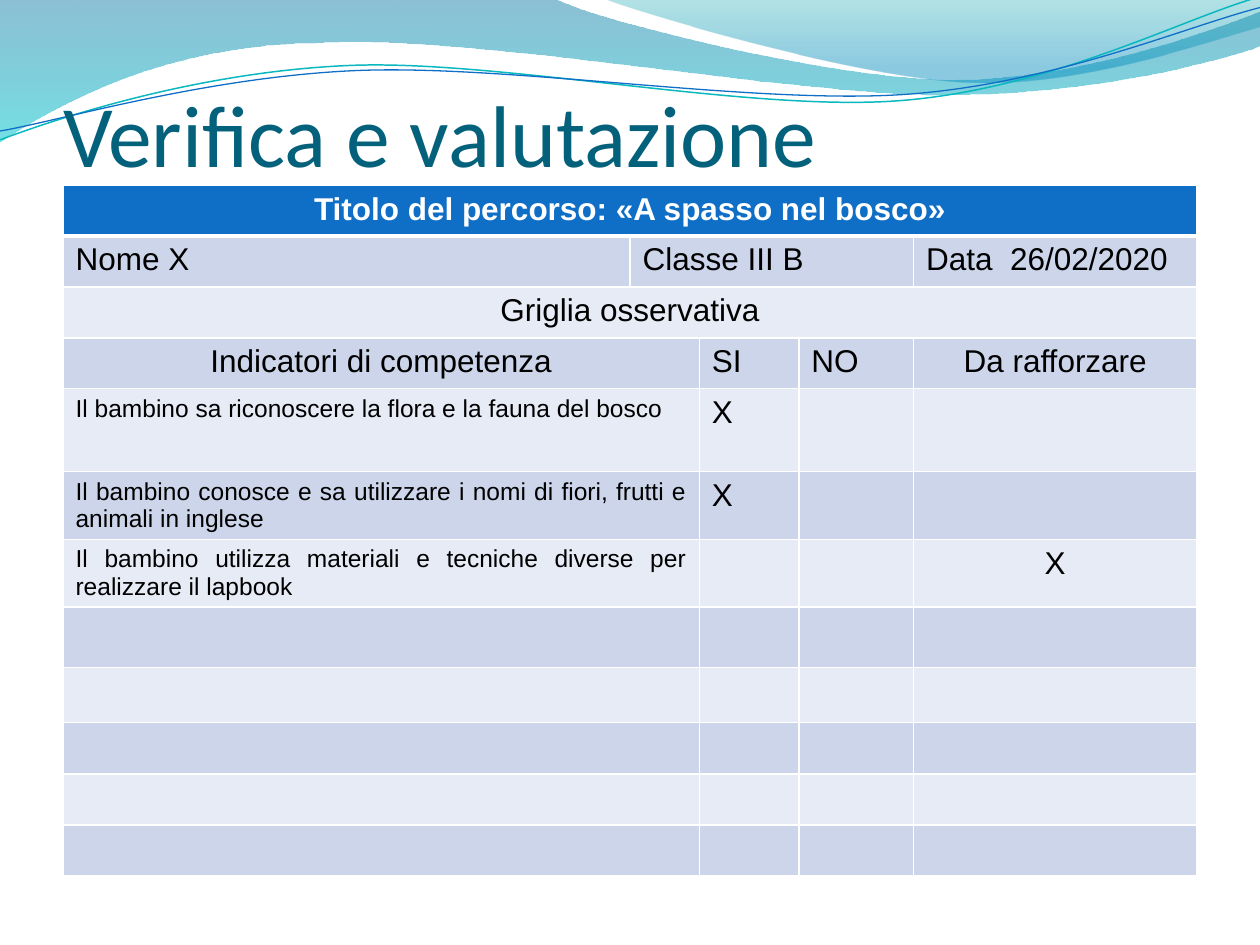
from math import cos, radians, sin

from lxml.etree import SubElement
from pptx import Presentation
from pptx.dml.color import RGBColor
from pptx.enum.text import MSO_ANCHOR, MSO_AUTO_SIZE, PP_ALIGN as ALIGN
from pptx.oxml.ns import qn
from pptx.util import Inches, Pt

COLORS = {
    "title": "04617B", "header": "0F6FC6", "band_dark": "CCD5EA", "band_light": "E7EBF5",
    "white": "FFFFFF", "black": "000000", "teal_line": "0AB8BF", "blue_line": "0F6FC6",
    "wave_blue": "0074A1", "wave_cyan": "00C6CF", "crest_teal": "00A1A9", "crest_blue": "008BBF",
}
TILT = -2.7  # degrees, for the two thin curves

# Outlines: one point is a straight step, three points are a Bezier curve
WAVE = [[(0, -0.01)], [(4.4, -0.01)], [(4.76, 0.17), (6.64, 0.63), (7.58, 0.63)],
        [(8.53, 0.63), (9.58, 0.26), (10, 0.09)], [(10.01, 0.36)],
        [(9.83, 0.44), (8.7, 0.76), (7.46, 0.75)], [(6.22, 0.75), (3.82, 0.28), (2.57, 0.34)],
        [(1.29, 0.35), (0.46, 0.83), (-0.01, 1.13)], [(0, -0.01)]]
CREST = [[(4.79, -0.01)], [(5.09, 0.11), (6.82, 0.62), (7.69, 0.65)],
         [(8.56, 0.69), (9.61, 0.32), (10, 0.21)], [(10, 0)], [(4.79, -0.01)]]
TEAL_CURVE = [[(0, 1.11)], [(0.48, 0.93), (1.58, 0.57), (2.77, 0.52)],
              [(3.95, 0.47), (5.93, 0.89), (7.13, 0.8)],
              [(8.33, 0.71), (9.38, 0.15), (9.98, -0.02)]]
BLUE_CURVE = [[(0, 1.04)], [(0.47, 0.96), (1.64, 0.61), (2.83, 0.56)],
              [(4.03, 0.51), (5.97, 0.83), (7.17, 0.75)],
              [(8.36, 0.67), (9.41, 0.21), (10, 0.06)]]

# Table content: (first column, last column, text, alignment, size)
COLUMNS = [4.5, 0.55, 0.79, 0.91, 2.25]
ROWS = [0.405] * 4 + [0.66, 0.54, 0.54, 0.48, 0.44] + [0.405] * 3
HEADINGS = [
    [(0, 4, "Titolo del percorso: «A spasso nel bosco»", ALIGN.CENTER, 18)],
    [(0, 0, "Nome X", ALIGN.LEFT, 18), (1, 3, "Classe III B", ALIGN.LEFT, 18),
     (4, 4, "Data  26/02/2020", ALIGN.LEFT, 18)],
    [(0, 4, "Griglia osservativa", ALIGN.CENTER, 18)],
    [(0, 1, "Indicatori di competenza", ALIGN.CENTER, 18), (2, 2, "SI", ALIGN.LEFT, 18),
     (3, 3, "NO", ALIGN.LEFT, 18), (4, 4, "Da rafforzare", ALIGN.CENTER, 18)],
]
# Indicator and the column that holds its mark
INDICATORS = [
    ("Il bambino sa riconoscere la flora e la fauna del bosco", 2),
    ("Il bambino conosce e sa utilizzare i nomi di fiori, frutti e animali in inglese", 2),
    ("Il bambino utilizza materiali e tecniche diverse per realizzare il lapbook", 4),
]


def color(name):
    return RGBColor.from_string(COLORS[name])


def turn(outline, degrees, center):
    """Rotate every point of an outline about a center."""
    c, s = cos(radians(degrees)), sin(radians(degrees))
    cx, cy = center
    return [[(cx + (x - cx) * c - (y - cy) * s, cy + (x - cx) * s + (y - cy) * c)
             for x, y in step] for step in outline]


def add_outline(shapes, left, top, outline, closed):
    steps = [[(Inches(left + x), Inches(top + y)) for x, y in step] for step in outline]
    ends = [step[-1] for step in steps]
    builder = shapes.build_freeform(*ends[0])
    builder.add_line_segments(ends[1:], close=closed)
    shape = builder.convert_to_shape()
    shape.shadow.inherit = False
    # Bend the straight segments that have control points
    segments = list(shape._element.iter(qn("a:lnTo")))
    for segment, step in zip(segments, steps[1:]):
        if len(step) == 3:
            curve = segment.getparent().makeelement(qn("a:cubicBezTo"))
            for x, y in step:
                SubElement(curve, qn("a:pt"), x=str(x - shape.left), y=str(y - shape.top))
            segment.getparent().replace(segment, curve)
    return shape


def add_wave(slide, left, top, outline, stops):
    """Filled wave; each stop is (position, color name, opacity in percent)."""
    shape = add_outline(slide.shapes, left, top, outline, True)
    shape.line.fill.background()
    shape.fill.gradient()
    shape.fill.gradient_angle = 270
    for stop, (position, name, _) in zip(shape.fill.gradient_stops, stops):
        stop.position = position
        stop.color.rgb = color(name)
    gradient = shape._element.spPr.find(qn("a:gradFill"))
    for element, (_, _, opacity) in zip(gradient.iter(qn("a:srgbClr")), stops):
        SubElement(element, qn("a:alpha"), val=str(opacity * 1000))


def add_header_waves(slide, left, top):
    add_wave(slide, left, top, WAVE, [(0, "wave_blue", 45), (1, "wave_cyan", 55)])
    add_wave(slide, left, top, CREST, [(0, "crest_teal", 30), (0.8, "crest_blue", 45)])
    # Thin curves, drawn level and then tilted together
    group = slide.shapes.add_group_shape()
    for outline, name, width in ((TEAL_CURVE, "teal_line", 0.85), (BLUE_CURVE, "blue_line", 0.75)):
        level = turn(outline, -TILT, (4.99, 0.58))
        curve = add_outline(group.shapes, left, top, level, False)
        curve.rotation = TILT
        curve.fill.background()
        curve.line.color.rgb = color(name)
        curve.line.width = Pt(width)


def place_title(slide, left, top, width, height):
    title = slide.shapes.title
    title.left, title.top, title.width, title.height = map(Inches, (left, top, width, height))
    frame = title.text_frame
    frame.text = "Verifica e valutazione"
    frame.auto_size = MSO_AUTO_SIZE.NONE
    frame.vertical_anchor = MSO_ANCHOR.BOTTOM
    frame.margin_left = frame.margin_right = frame.margin_bottom = 0
    frame.margin_top = Inches(0.05)
    paragraph = frame.paragraphs[0]
    paragraph.alignment = ALIGN.LEFT
    paragraph.font.name, paragraph.font.size = "Calibri", Pt(50)
    paragraph.font.color.rgb = color("title")
    # Bring the title in front of the waves
    slide.shapes._spTree.append(title._element)


def style_cell(cell, row):
    """White borders, with a thick rule under the header, and a banded fill."""
    properties = cell._tc.get_or_add_tcPr()
    for side in "LRTB":
        thick = (row, side) in ((0, "B"), (1, "T"))
        line = SubElement(properties, qn(f"a:ln{side}"), w=str(Pt(3 if thick else 1)))
        fill = SubElement(line, qn("a:solidFill"))
        SubElement(fill, qn("a:srgbClr"), val=COLORS["white"])
    cell.fill.solid()
    band = "band_dark" if row % 2 else "band_light"
    cell.fill.fore_color.rgb = color(band if row else "header")


def write_cell(cell, text, alignment, size, header):
    cell.text = text
    paragraph = cell.text_frame.paragraphs[0]
    paragraph.alignment = alignment
    font = paragraph.font
    font.name, font.size, font.bold = "Arial", Pt(size), header
    font.color.rgb = color("white" if header else "black")


def indicator_row(text="", marked=None):
    row = [(0, 1, text, ALIGN.JUSTIFY, 14)]
    if marked:
        row.append((marked, marked, "X", ALIGN.CENTER if marked == 4 else ALIGN.LEFT, 18))
    return row


def add_grid(slide, left, top, width, height):
    table = slide.shapes.add_table(len(ROWS), len(COLUMNS), Inches(left), Inches(top),
                                   Inches(width), Inches(height)).table
    for column, share in zip(table.columns, COLUMNS):
        column.width = Inches(width * share / sum(COLUMNS))
    content = HEADINGS + [indicator_row(*indicator) for indicator in INDICATORS]
    content += [indicator_row()] * (len(ROWS) - len(content))
    for r, (row_height, entries) in enumerate(zip(ROWS, content)):
        table.rows[r].height = Inches(height * row_height / sum(ROWS))
        for c in range(len(COLUMNS)):
            style_cell(table.cell(r, c), r)
        for first, last, text, alignment, size in entries:
            cell = table.cell(r, first)
            if last > first:
                cell.merge(table.cell(r, last))
            if text:
                write_cell(cell, text, alignment, size, r == 0)


def main():
    presentation = Presentation()
    presentation.slide_width, presentation.slide_height = Inches(10), Inches(7.5)
    slide = presentation.slides.add_slide(presentation.slide_layouts[5])
    add_header_waves(slide, 0, 0)
    place_title(slide, 0.5, 0.6, 9, 0.87)
    add_grid(slide, 0.5, 1.47, 9, 5.48)
    presentation.save("out.pptx")


if __name__ == "__main__":
    main()
